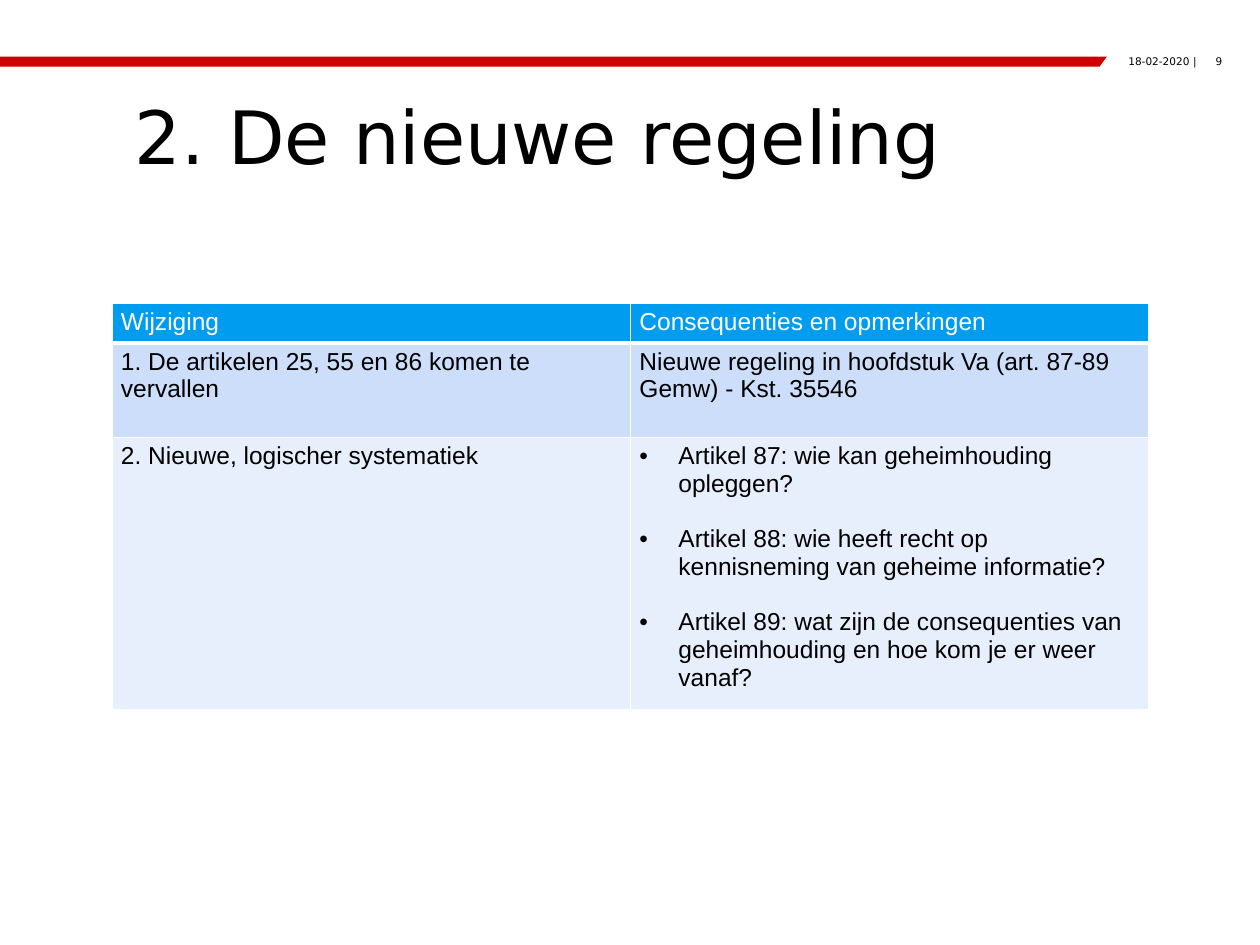
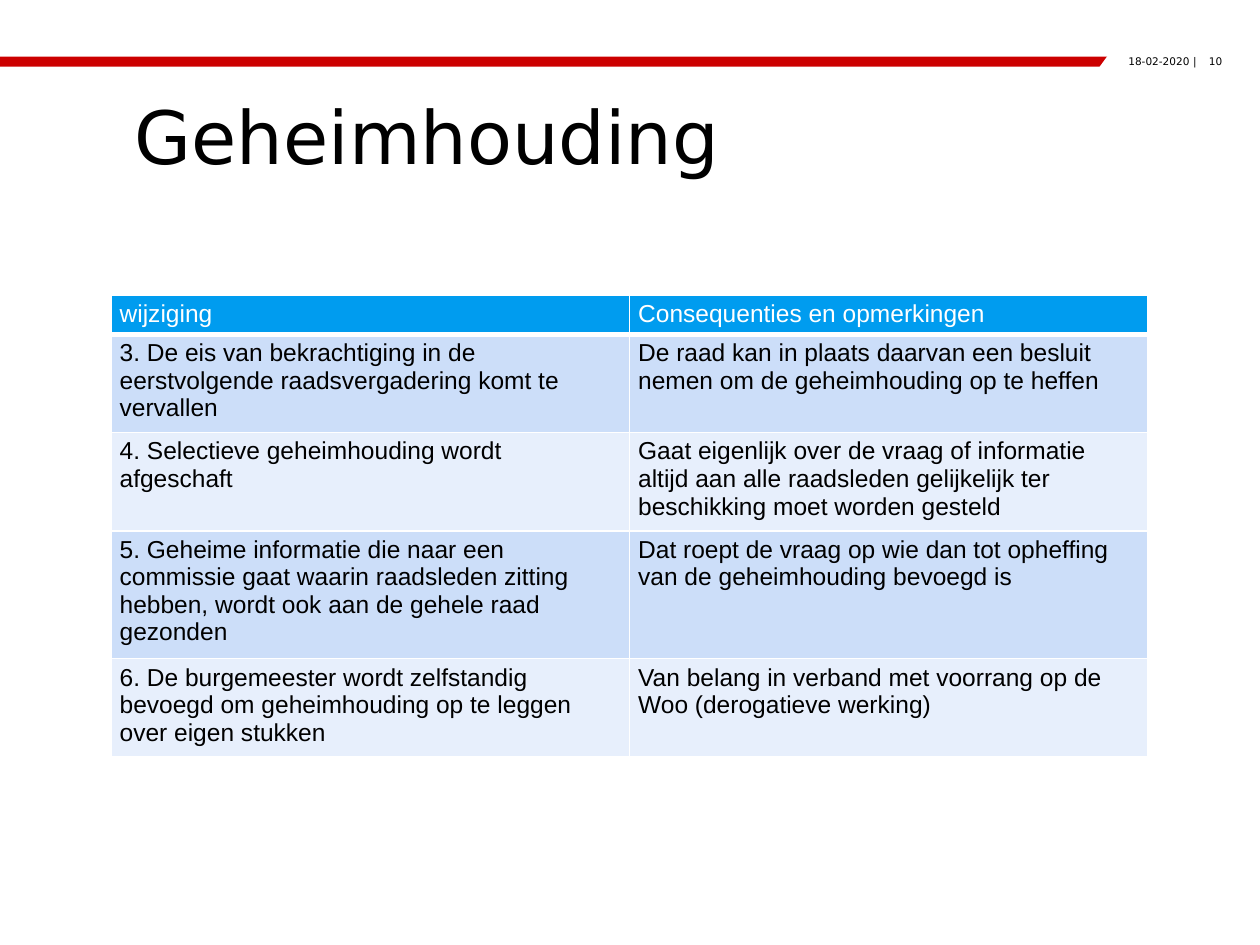
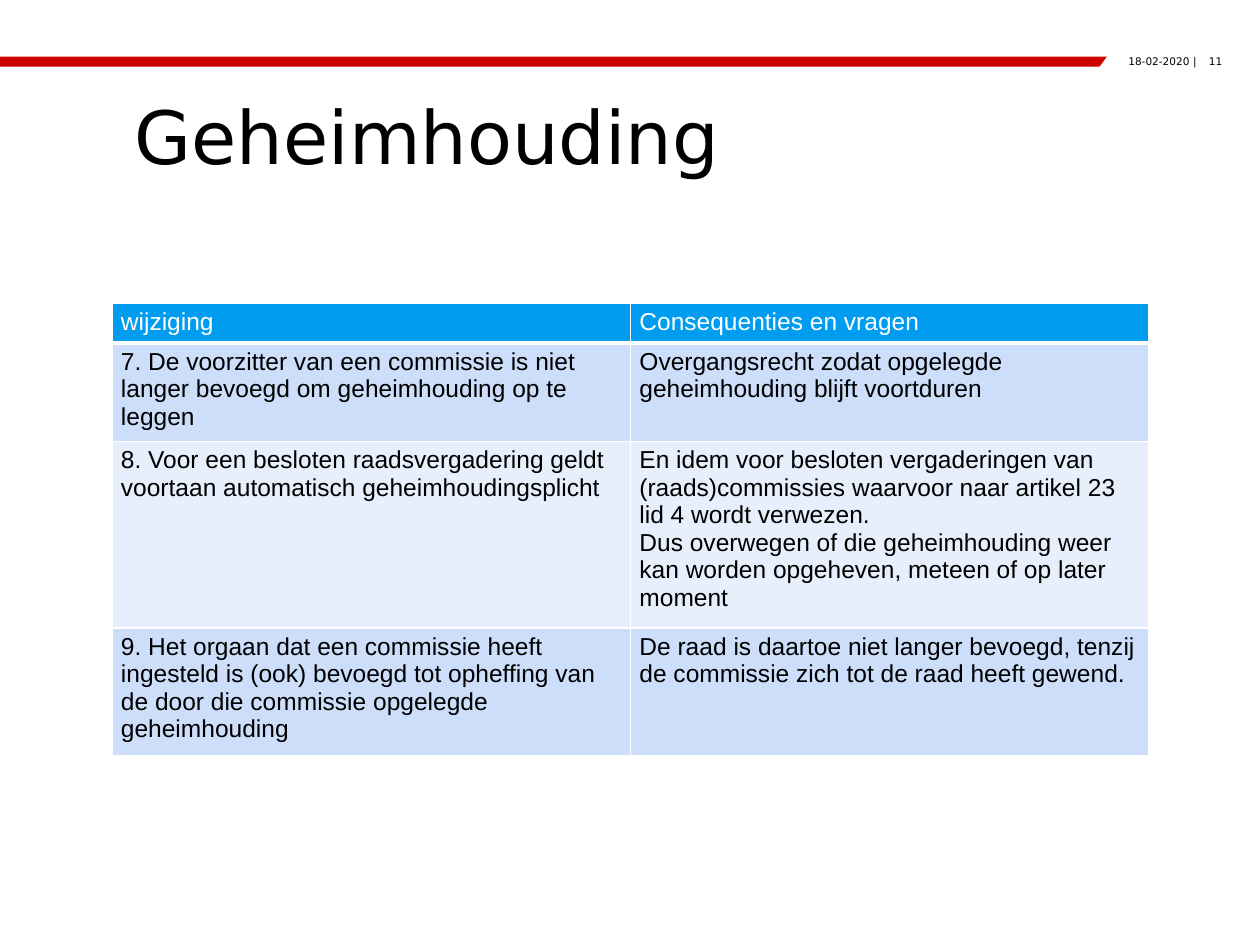
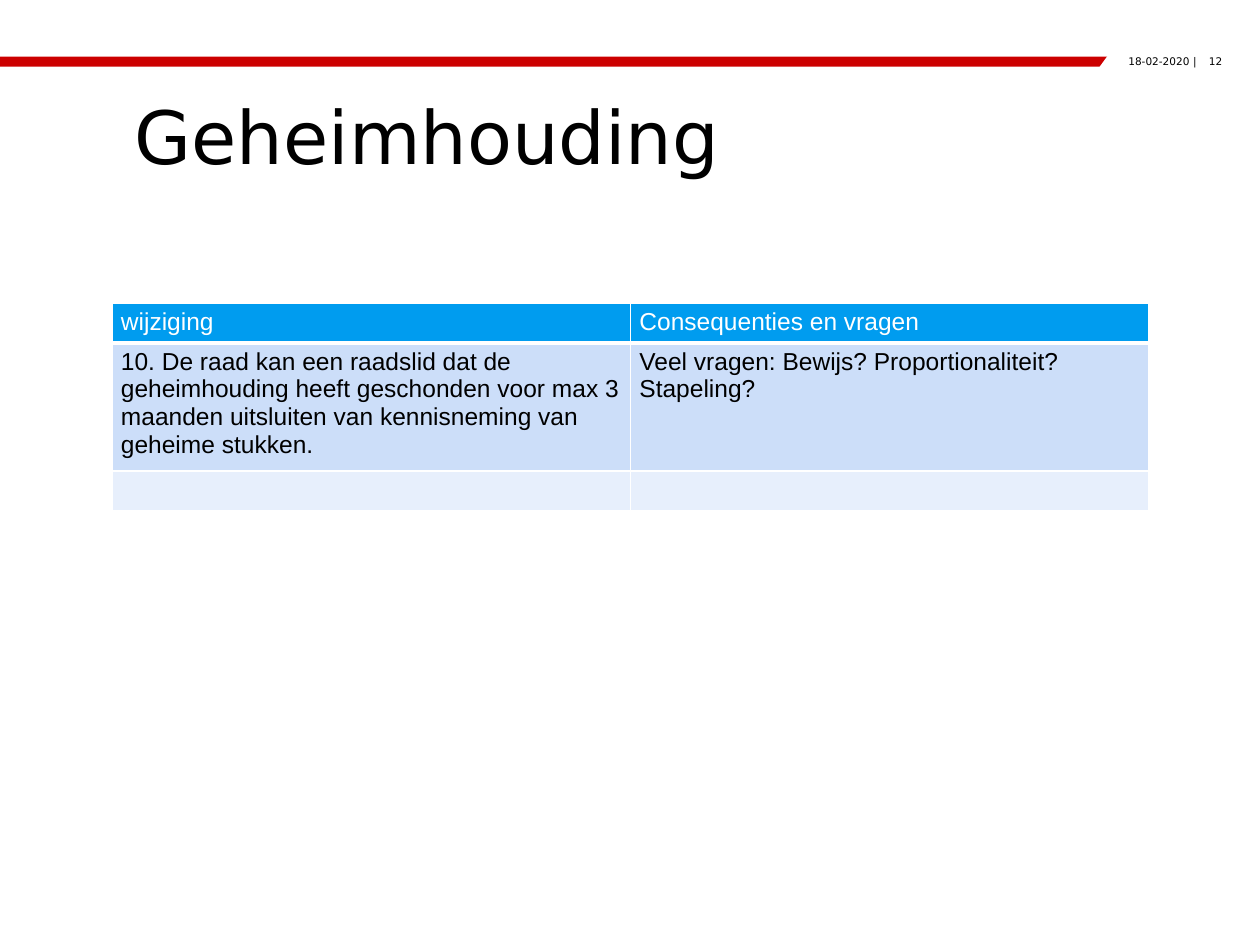
import dataclasses

import lxml.etree
import pptx
import pptx.dml.color
import pptx.enum.shapes
import pptx.enum.text
import pptx.oxml.ns
import pptx.util

ALIGN = pptx.enum.text.PP_ALIGN
ANCHOR = pptx.enum.text.MSO_ANCHOR
qn = pptx.oxml.ns.qn


@dataclasses.dataclass(frozen=True)
class Theme:
    black: str = "000000"
    white: str = "FFFFFF"
    red: str = "CC0000"
    header: str = "009CEF"
    bands: tuple = ("CCDEF9", "E7EFFC")
    heading_font: str = "DejaVu Sans"
    table_font: str = "Arial"
    title_size: int = 42
    table_size: int = 14
    footer_size: int = 6
    border: int = 1
    header_border: int = 3
    bullet_gap: int = 16


def rgb(colour):
    return pptx.dml.color.RGBColor.from_string(colour)


class Deck:
    """Builds slides on a grid of 100 columns by 75 rows."""

    COLUMNS, ROWS = 100, 75

    def __init__(self, theme):
        self.theme = theme
        self.presentation = pptx.Presentation()
        self.presentation.slide_width = pptx.util.Inches(10)
        self.presentation.slide_height = pptx.util.Inches(7.5)
        self.slide = None

    def x(self, columns):
        return round(self.presentation.slide_width * columns / self.COLUMNS)

    def y(self, rows):
        return round(self.presentation.slide_height * rows / self.ROWS)

    def box(self, left, top, width, height):
        return self.x(left), self.y(top), self.x(width), self.y(height)

    def add_slide(self, title, number):
        self.slide = self.presentation.slides.add_slide(self.presentation.slide_layouts[6])
        self.add_band()
        size = self.theme.footer_size
        self.add_text(str(number), (94.9, 4.4, 2.1, 1.5), size, ALIGN.RIGHT)
        self.add_text("|", (94.7, 4.4, 0.6, 1.5), size)
        self.add_text("18-02-2020", (86.1, 4.4, 8.3, 1.5), size, ALIGN.RIGHT)
        self.add_text(title, (0, 6.4, 100, 8.7), self.theme.title_size,
                      anchor=ANCHOR.MIDDLE, insets=(10.7, 0.5, 3, 0.5))

    def add_band(self):
        """Red band whose right end is cut off at a slant."""
        band = self.slide.shapes.add_shape(
            pptx.enum.shapes.MSO_SHAPE.RECTANGLE, *self.box(0, 4.5, 100, 0.8))
        self.paint(band, self.theme.red)
        corners = [(self.x(column), self.y(row))
                   for column, row in ((88, 4.3), (100, 4.3), (100, 5.4), (87.2, 5.4))]
        builder = self.slide.shapes.build_freeform(*corners[0])
        builder.add_line_segments(corners[1:], close=True)
        self.paint(builder.convert_to_shape(), self.theme.white)

    def paint(self, shape, colour):
        shape.shadow.inherit = False
        shape.fill.solid()
        shape.fill.fore_color.rgb = rgb(colour)
        shape.line.fill.background()

    def format_runs(self, paragraph, font_name, size, colour):
        for run in paragraph.runs:
            run.font.name = font_name
            run.font.size = pptx.util.Pt(size)
            run.font.bold = False
            run.font.color.rgb = rgb(colour)

    def set_insets(self, target, left, top, right, bottom):
        target.margin_left, target.margin_right = self.x(left), self.x(right)
        target.margin_top, target.margin_bottom = self.y(top), self.y(bottom)

    def add_text(self, text, area, size, align=ALIGN.LEFT, anchor=ANCHOR.TOP,
                 insets=(0, 0, 0, 0)):
        text_frame = self.slide.shapes.add_textbox(*self.box(*area)).text_frame
        text_frame.word_wrap = True
        text_frame.vertical_anchor = anchor
        self.set_insets(text_frame, *insets)
        text_frame.text = text
        paragraph = text_frame.paragraphs[0]
        paragraph.alignment = align
        self.format_runs(paragraph, self.theme.heading_font, size, self.theme.black)

    def add_table(self, rows, heights, left=8.9, top=24.1):
        width = 82.3
        shape = self.slide.shapes.add_table(
            len(rows), len(rows[0]), *self.box(left, top, width, sum(heights)))
        table = shape.table
        table.horz_banding = False
        for column in table.columns:
            column.width = self.x(width / len(rows[0]))
        for index, (row, height) in enumerate(zip(rows, heights)):
            table.rows[index].height = self.y(height)
            for cell, content in zip(table.rows[index].cells, row):
                self.fill_cell(cell, content, index)

    def fill_cell(self, cell, content, row_index):
        """Content is a string, or a list of strings for bullets."""
        theme = self.theme
        is_header = row_index == 0
        bulleted = isinstance(content, list)
        self.set_insets(cell, 0.7, 0.4, 0.7, 0.4)
        cell.text_frame.text = "\n".join(content) if bulleted else content
        for index, paragraph in enumerate(cell.text_frame.paragraphs):
            if bulleted:
                self.add_bullet(paragraph)
                if index:
                    paragraph.space_before = pptx.util.Pt(theme.bullet_gap)
            self.format_runs(paragraph, theme.table_font, theme.table_size,
                             theme.white if is_header else theme.black)
            if not paragraph.runs:
                lxml.etree.SubElement(paragraph._p, qn("a:endParaRPr"),
                                      sz=str(theme.table_size * 100))
        for side in "LRTB":
            heavy = is_header and side == "B"
            self.add_border(cell, side, theme.header_border if heavy else theme.border)
        cell.fill.solid()
        cell.fill.fore_color.rgb = rgb(
            theme.header if is_header else theme.bands[(row_index - 1) % 2])

    def add_bullet(self, paragraph):
        properties = paragraph._p.get_or_add_pPr()
        indent = self.x(3.1)
        properties.set("marL", str(indent))
        properties.set("indent", str(-indent))
        lxml.etree.SubElement(properties, qn("a:buFont"), typeface=self.theme.table_font)
        lxml.etree.SubElement(properties, qn("a:buChar"), char="•")

    def add_border(self, cell, side, points):
        line = lxml.etree.SubElement(cell._tc.get_or_add_tcPr(), qn("a:ln" + side),
                                     w=str(pptx.util.Pt(points)))
        fill = lxml.etree.SubElement(line, qn("a:solidFill"))
        lxml.etree.SubElement(fill, qn("a:srgbClr"), val=self.theme.white)


def main():
    deck = Deck(Theme())

    deck.add_slide("2. De nieuwe regeling", 9)
    deck.add_table([
        ("Wijziging", "Consequenties en opmerkingen"),
        ("1. De artikelen 25, 55 en 86 komen te vervallen",
         "Nieuwe regeling in hoofdstuk Va (art. 87-89 Gemw) - Kst. 35546"),
        ("2. Nieuwe, logischer systematiek",
         ["Artikel 87: wie kan geheimhouding opleggen?",
          "Artikel 88: wie heeft recht op kennisneming van geheime informatie?",
          "Artikel 89: wat zijn de consequenties van geheimhouding en hoe kom je er "
          "weer vanaf?"]),
    ], heights=(3, 7.5, 21))

    deck.add_slide("Geheimhouding", 10)
    deck.add_table([
        ("wijziging", "Consequenties en opmerkingen"),
        ("3. De eis van bekrachtiging in de eerstvolgende raadsvergadering komt te vervallen",
         "De raad kan in plaats daarvan een besluit nemen om de geheimhouding op te heffen"),
        ("4. Selectieve geheimhouding wordt afgeschaft",
         "Gaat eigenlijk over de vraag of informatie altijd aan alle raadsleden gelijkelijk "
         "ter beschikking moet worden gesteld"),
        ("5. Geheime informatie die naar een commissie gaat waarin raadsleden zitting "
         "hebben, wordt ook aan de gehele raad gezonden",
         "Dat roept de vraag op wie dan tot opheffing van de geheimhouding bevoegd is"),
        ("6. De burgemeester wordt zelfstandig bevoegd om geheimhouding op te leggen over "
         "eigen stukken",
         "Van belang in verband met voorrang op de Woo (derogatieve werking)"),
    ], heights=(3, 7.5, 7.5, 9.7, 7.5), left=8.8, top=23.4)

    deck.add_slide("Geheimhouding", 11)
    deck.add_table([
        ("wijziging", "Consequenties en vragen"),
        ("7. De voorzitter van een commissie is niet langer bevoegd om geheimhouding op te "
         "leggen",
         "Overgangsrecht zodat opgelegde geheimhouding blijft voortduren"),
        ("8. Voor een besloten raadsvergadering geldt voortaan automatisch "
         "geheimhoudingsplicht",
         "En idem voor besloten vergaderingen van (raads)commissies waarvoor naar artikel "
         "23 lid 4 wordt verwezen.\n"
         "Dus overwegen of die geheimhouding weer kan worden opgeheven, meteen of op later "
         "moment"),
        ("9. Het orgaan dat een commissie heeft ingesteld is (ook) bevoegd tot opheffing "
         "van de door die commissie opgelegde geheimhouding",
         "De raad is daartoe niet langer bevoegd, tenzij de commissie zich tot de raad "
         "heeft gewend."),
    ], heights=(3, 7.5, 14.3, 9.7))

    deck.add_slide("Geheimhouding", 12)
    deck.add_table([
        ("wijziging", "Consequenties en vragen"),
        ("10. De raad kan een raadslid dat de geheimhouding heeft geschonden voor max 3 "
         "maanden uitsluiten van kennisneming van geheime stukken.",
         "Veel vragen: Bewijs? Proportionaliteit? Stapeling?"),
        ("", ""),
    ], heights=(3, 9.7, 3))

    deck.presentation.save("out.pptx")


if __name__ == "__main__":
    main()
